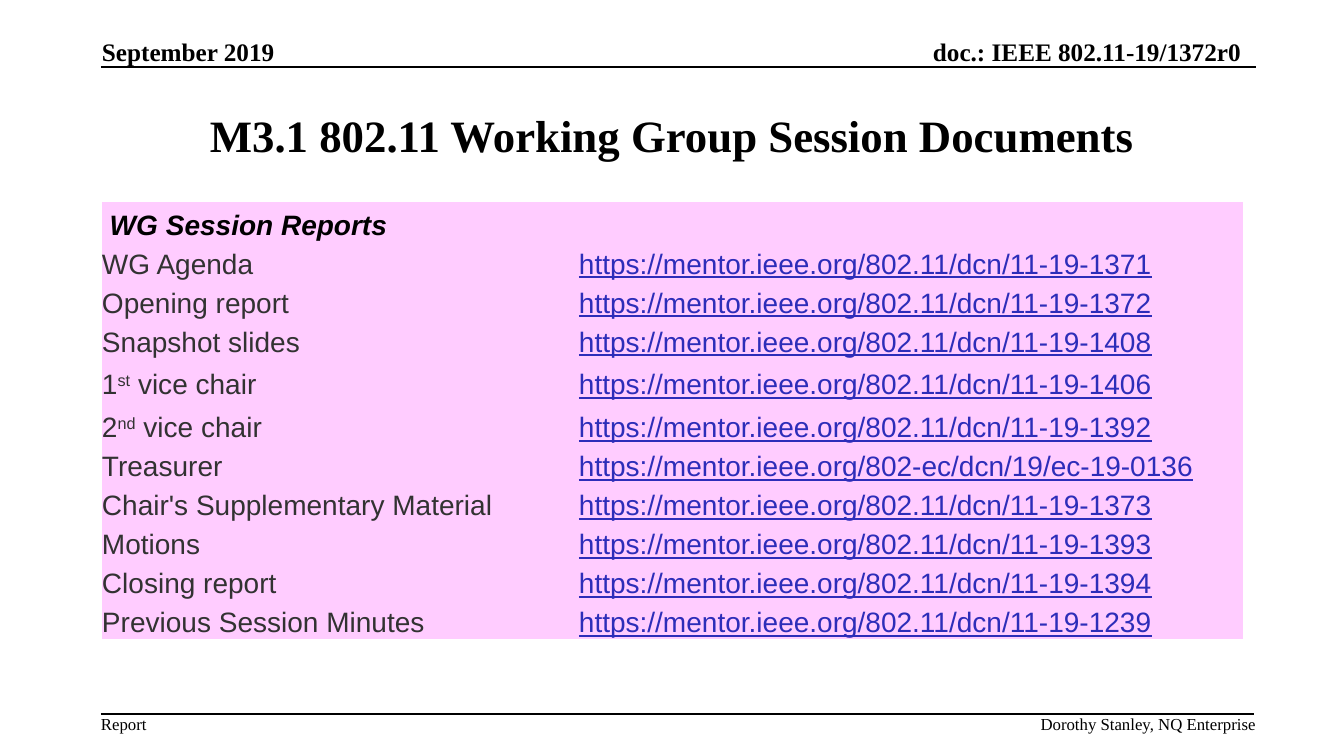
import pptx
import pptx.util
import pptx.dml.color
import pptx.enum.shapes
import pptx.enum.text
import pptx.oxml.ns
from dataclasses import dataclass
from lxml import etree

PX = 9071.43
ALIGN = pptx.enum.text.PP_ALIGN
ANCHOR = pptx.enum.text.MSO_ANCHOR


@dataclass(frozen=True)
class Theme:
    serif: str = "Times New Roman"
    sans: str = "Arial"
    black: str = "000000"
    label: str = "323232"
    link: str = "2D2DB9"
    panel: str = "FFCCFF"
    title: int = 32
    table: int = 20
    header: int = 18
    footer: int = 12


THEME = Theme()
WG = "https://mentor.ieee.org/802.11/dcn/11-19-"
REPORTS = [
    (["WG Agenda"], WG + "1371"),
    (["Opening report"], WG + "1372"),
    (["Snapshot slides"], WG + "1408"),
    (["1", "st", " vice chair"], WG + "1406"),
    (["2", "nd", " vice chair"], WG + "1392"),
    (["Treasurer"], "https://mentor.ieee.org/802-ec/dcn/19/ec-19-0136"),
    (["Chair's Supplementary Material"], WG + "1373"),
    (["Motions"], WG + "1393"),
    (["Closing report"], WG + "1394"),
    (["Previous Session Minutes"], WG + "1239"),
]


def px(n):
    return pptx.util.Emu(round(n * PX))


def style(p, face, size, color, bold=False, italic=False, underline=False):
    font = p.font
    font.name, font.size = face, pptx.util.Pt(size)
    font.bold, font.italic, font.underline = bold, italic, underline
    font.color.rgb = pptx.dml.color.RGBColor.from_string(color)


def add_title(s, text, x, y, w, h):
    title = s.shapes.title
    title.left, title.top, title.width, title.height = map(px, (x, y, w, h))
    tf = title.text_frame
    tf.text = text
    tf.vertical_anchor = ANCHOR.MIDDLE
    p = tf.paragraphs[0]
    p.alignment = ALIGN.CENTER
    style(p, THEME.serif, THEME.title, THEME.black, bold=True)


def add_label(s, text, x, y, w, h, size, align, anchor, bold=False):
    tf = s.shapes.add_textbox(*map(px, (x, y, w, h))).text_frame
    tf.margin_left = tf.margin_right = tf.margin_top = tf.margin_bottom = 0
    tf.word_wrap = False
    tf.vertical_anchor = anchor
    p = tf.paragraphs[0]
    p.text = text
    p.alignment = align
    style(p, THEME.serif, size, THEME.black, bold=bold)


def add_rule(s, x1, x2, y):
    line = s.shapes.add_connector(
        pptx.enum.shapes.MSO_CONNECTOR.STRAIGHT, px(x1), px(y), px(x2), px(y))
    line.line.width = pptx.util.Pt(1)
    line.line.color.rgb = pptx.dml.color.RGBColor.from_string(THEME.black)
    etree.SubElement(line._element.spPr, pptx.oxml.ns.qn("a:effectLst"))


def clear_borders(cell):
    tcPr = cell._tc.get_or_add_tcPr()
    for side in ("a:lnL", "a:lnR", "a:lnT", "a:lnB"):
        border = etree.SubElement(tcPr, pptx.oxml.ns.qn(side), w="0")
        etree.SubElement(border, pptx.oxml.ns.qn("a:noFill"))


def fill_cell(cell, pieces, color, **marks):
    cell.margin_left = cell.margin_right = 0
    cell.margin_top = cell.margin_bottom = 0
    cell.vertical_anchor = ANCHOR.BOTTOM
    clear_borders(cell)
    cell.fill.solid()
    cell.fill.fore_color.rgb = pptx.dml.color.RGBColor.from_string(THEME.panel)
    p = cell.text_frame.paragraphs[0]
    style(p, THEME.sans, THEME.table, color, **marks)
    for i, piece in enumerate(pieces):
        r = p.add_run()
        r.text = piece
        if i == 1:
            r._r.get_or_add_rPr().set("baseline", "30000")


def add_reports(s, x, y, widths, row_height, tall_row_height):
    heights = [row_height] + [
        tall_row_height if len(label) > 1 else row_height for label, _ in REPORTS]
    table = s.shapes.add_table(
        len(heights), len(widths), px(x), px(y),
        px(sum(widths)), px(sum(heights))).table
    table.first_row = table.horz_banding = False
    for column, width in zip(table.columns, widths):
        column.width = px(width)
    for row, height in zip(table.rows, heights):
        row.height = px(height)
    fill_cell(table.cell(0, 0), [" WG Session Reports"], THEME.black,
              bold=True, italic=True)
    fill_cell(table.cell(0, 1), [], THEME.label)
    for i, (label, url) in enumerate(REPORTS, 1):
        fill_cell(table.cell(i, 0), label, THEME.label)
        fill_cell(table.cell(i, 1), [url], THEME.link, underline=True)


def main():
    prs = pptx.Presentation()
    prs.slide_width, prs.slide_height = px(1344), px(756)
    s = prs.slides.add_slide(prs.slide_layouts.get_by_name("Title Only"))
    add_title(s, "M3.1 802.11 Working Group Session Documents", 101, 76, 1142, 118)
    add_label(s, "September 2019", 102, 37, 180, 30,
              THEME.header, ALIGN.LEFT, ANCHOR.BOTTOM, bold=True)
    add_label(s, "doc.: IEEE 802.11-19/1372r0", 879, 37, 362, 30,
              THEME.header, ALIGN.RIGHT, ANCHOR.BOTTOM, bold=True)
    add_rule(s, 101, 1256, 67)
    add_reports(s, 102, 202, [477, 664], 39, 43)
    add_rule(s, 101, 1254, 714)
    add_label(s, "Report", 101, 714, 50, 20,
              THEME.footer, ALIGN.LEFT, ANCHOR.TOP)
    add_label(s, "Dorothy Stanley, NQ Enterprise", 1017, 714, 239, 20,
              THEME.footer, ALIGN.RIGHT, ANCHOR.TOP)
    prs.save("out.pptx")


if __name__ == "__main__":
    main()
